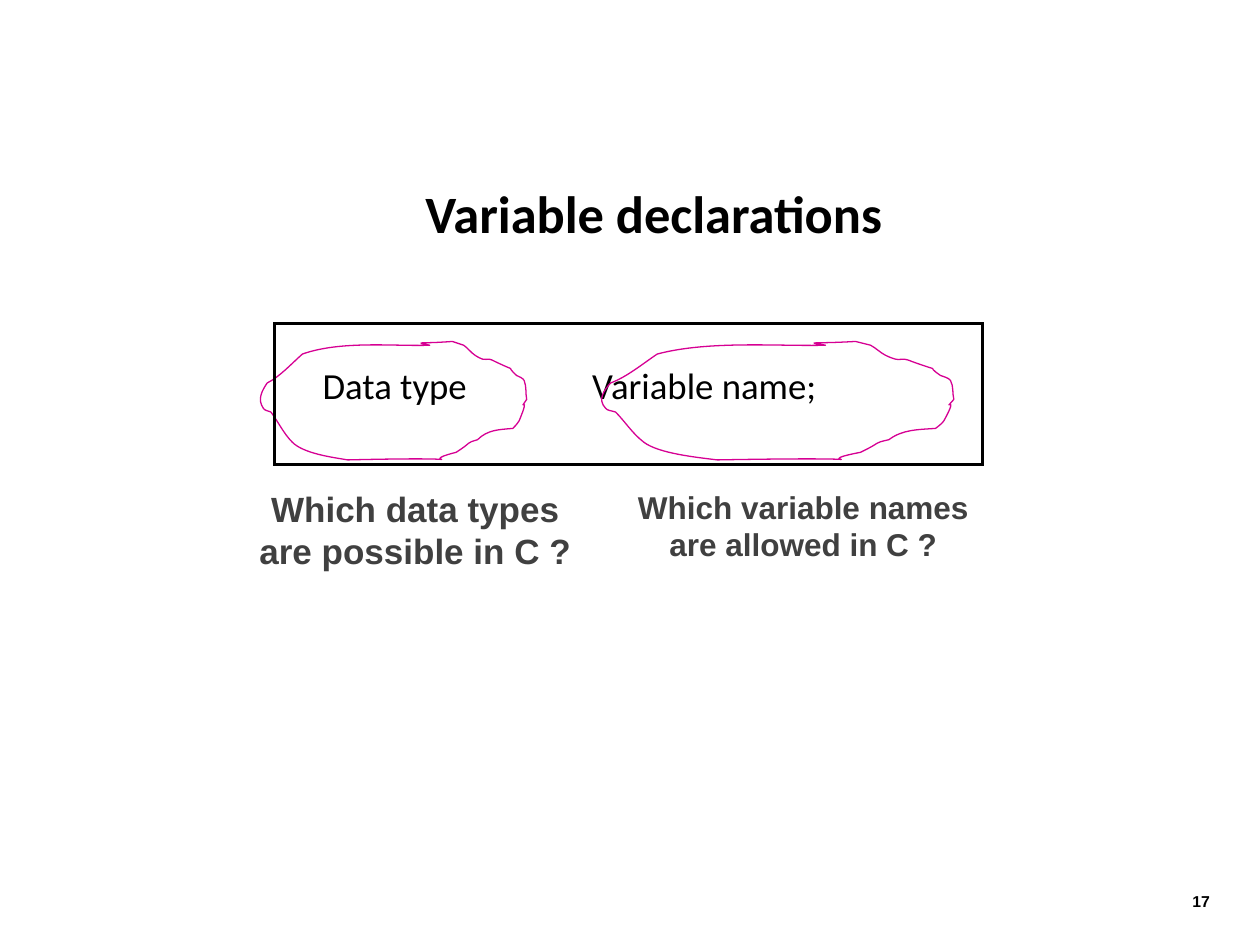
from lxml.etree import SubElement
from pptx import Presentation
from pptx.dml.color import RGBColor
from pptx.enum.shapes import MSO_SHAPE as Shape
from pptx.enum.text import MSO_ANCHOR as Anchor, MSO_AUTO_SIZE as Fit, PP_ALIGN as Align
from pptx.oxml.ns import qn
from pptx.util import Pt

PX = 9144  # 100 px to the inch
BLACK, GREY, PINK = "000000", "404040", "D60093"

# Hand-drawn loop: a start point, then cubic curves (two controls and an end)
LOOP_W = 217
START = (137, 4)
CURVES = [
    (110, 5), (67, 0), (36, 11), (27, 19), (18, 29), (8, 34),
    (4, 40), (0, 47), (5, 54), (6, 56), (9, 56), (11, 57),
    (17, 65), (21, 74), (28, 81), (37, 90), (60, 93), (72, 95),
    (196, 92), (118, 99), (158, 89), (172, 80), (165, 82), (175, 79),
    (183, 71), (192, 71), (203, 70), (205, 68), (207, 66), (208, 64),
    (218, 40), (206, 59), (214, 47), (213, 42), (214, 37), (212, 32),
    (211, 30), (208, 29), (206, 28), (195, 18), (210, 27), (189, 17),
    (180, 12), (184, 19), (173, 12), (170, 10), (167, 6), (164, 4),
    (161, 3), (155, 1), (155, 1), (129, 3), (124, 1), (137, 4),
]


def px(n):
    return round(n * PX)


def rgb(code):
    return RGBColor.from_string(code)


def place(item, box):
    item.left, item.top, item.width, item.height = map(px, box)


def write(para, text, size, font, color=BLACK, bold=False, align=None):
    para.alignment = align
    run = para.add_run()
    run.text = text
    face = run.font
    face.size, face.name, face.bold = Pt(size), font, bold
    face.color.rgb = rgb(color)


def outline(shape, color, width):
    shape.shadow.inherit = False
    shape.fill.background()
    shape.line.color.rgb = rgb(color)
    shape.line.width = Pt(width)


def title(slide, box):
    item = slide.shapes.title
    place(item, box)
    frame = item.text_frame
    frame.vertical_anchor = Anchor.MIDDLE
    para = frame.paragraphs[0]
    para.line_spacing = 0.9
    write(para, "Variable declarations", 30, "Calibri", bold=True, align=Align.CENTER)


def syntax(slide, box, tab):
    item = slide.placeholders[1]
    place(item, box)
    frame = item.text_frame
    frame.margin_left = frame.margin_right = px(7)
    frame.margin_top = frame.margin_bottom = px(4)
    para = frame.paragraphs[0]
    para.line_spacing, para.space_before = 0.9, Pt(7.5)
    write(para, "Data type\tVariable name;", 21, "Calibri")
    # No bullet; the tab width sets the second part's place
    props = para._p.get_or_add_pPr()
    props.set("marL", "0")
    props.set("indent", "0")
    props.set("defTabSz", str(px(tab)))
    SubElement(props, qn("a:buNone"))


def bend(shape):
    """Turn each three straight segments into one cubic curve."""
    lines = list(shape._element.iter(qn("a:lnTo")))
    for i in range(0, len(lines), 3):
        trio = lines[i:i + 3]
        cubic = trio[0].makeelement(qn("a:cubicBezTo"))
        trio[0].addprevious(cubic)
        for line in trio:
            cubic.append(line[0])
            line.getparent().remove(line)


def loop(slide, left, top, width):
    def spot(point):
        return px(left + point[0] * width / LOOP_W), px(top + point[1])

    build = slide.shapes.build_freeform(*spot(START))
    build.add_line_segments([spot(p) for p in CURVES], close=True)
    shape = build.convert_to_shape()
    bend(shape)
    outline(shape, PINK, 0.75)


def query(slide, box, lines, size):
    frame = slide.shapes.add_textbox(*map(px, box)).text_frame
    frame.word_wrap = False
    frame.auto_size = Fit.SHAPE_TO_FIT_TEXT
    for i, line in enumerate(lines):
        para = frame.add_paragraph() if i else frame.paragraphs[0]
        write(para, line, size, "Arial", GREY, True, Align.CENTER)


def number(slide, box):
    frame = slide.shapes.add_textbox(*map(px, box)).text_frame
    frame.word_wrap = True
    frame.vertical_anchor = Anchor.MIDDLE
    write(frame.paragraphs[0], "17", 9, "Arial", bold=True, align=Align.RIGHT)


def border(slide, box):
    shape = slide.shapes.add_shape(Shape.RECTANGLE, *map(px, box))
    outline(shape, BLACK, 1.75)
    # Sharp corners
    SubElement(shape.line._get_or_add_ln(), qn("a:miter"), lim="800000")


def main():
    deck = Presentation()
    deck.slide_width, deck.slide_height = px(1000), px(750)
    slide = deck.slides.add_slide(deck.slide_layouts[1])

    title(slide, (225, 144, 588, 56))
    syntax(slide, (249, 288, 556, 94), 214)
    number(slide, (931, 695, 39, 40))

    # Each part of the declaration: its loop and its question
    loop(slide, 204, 270, 217)
    query(slide, (195, 382, 277, 77),
          ("Which data types ", "are possible in C ? "), 20)
    query(slide, (495, 382, 292, 71),
          ("Which variable names ", "are allowed in C ? "), 18)
    loop(slide, 474, 270, 287)

    # Frame around the declaration
    border(slide, (218, 257, 562, 112))
    deck.save("out.pptx")


if __name__ == "__main__":
    main()
